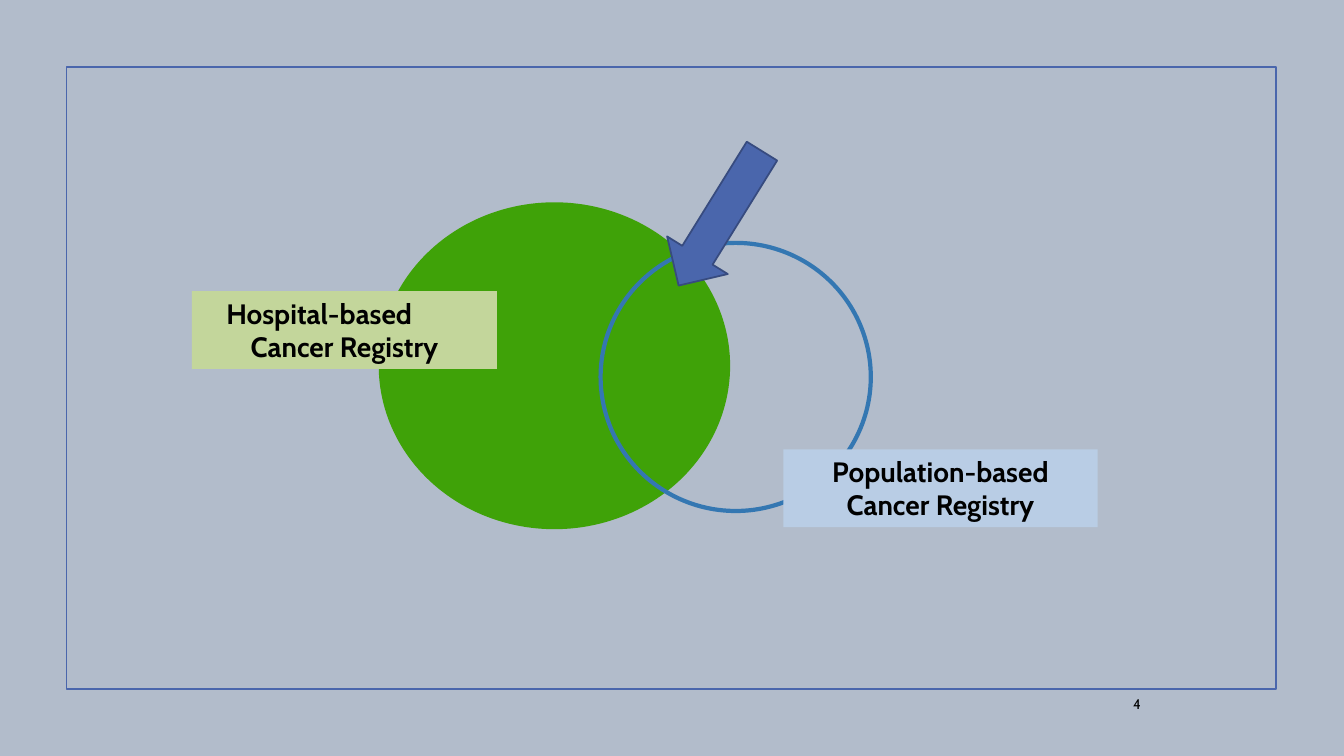
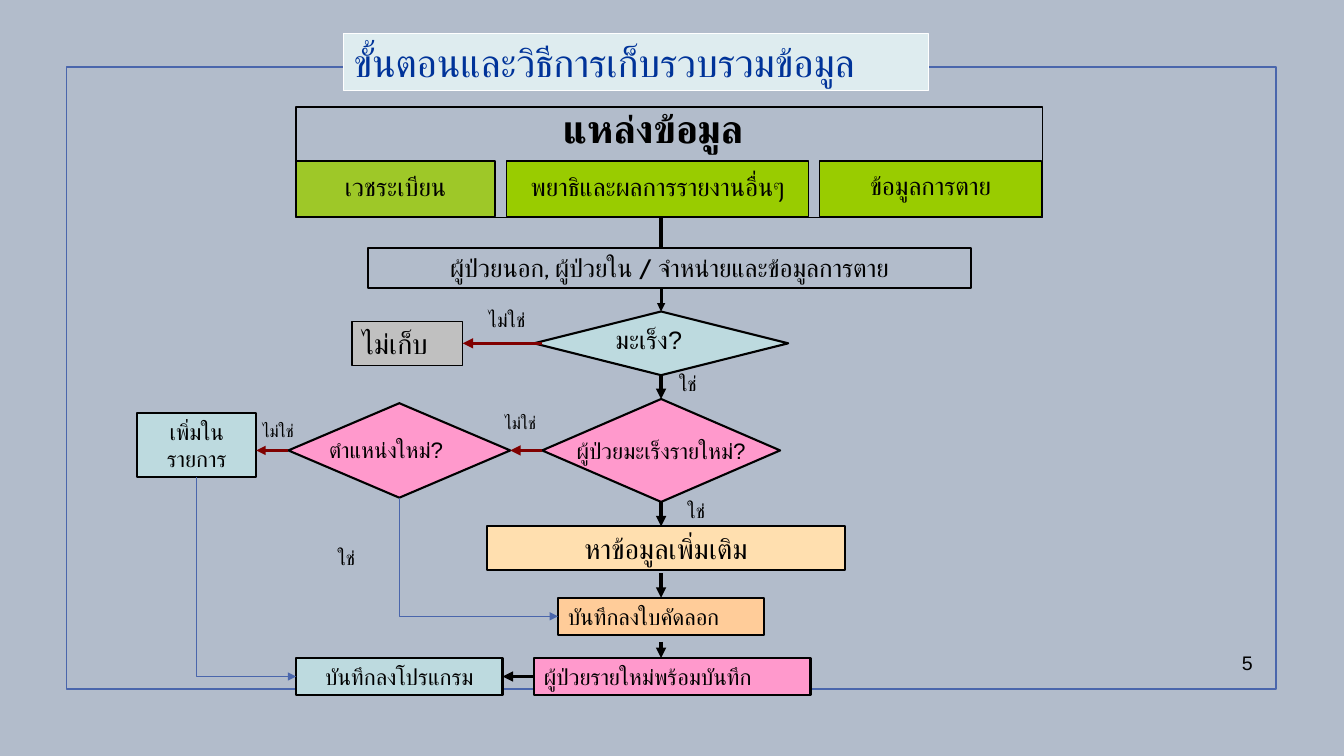
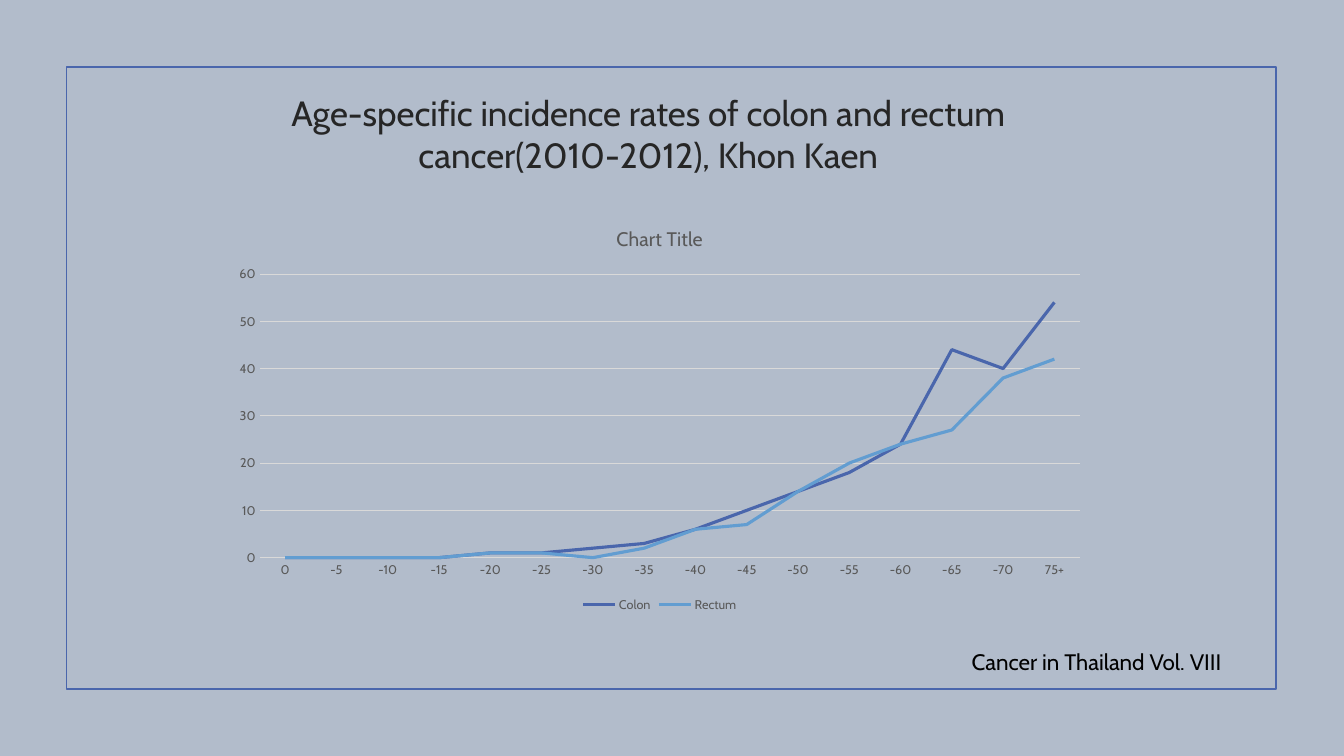
"""Build three cancer registry slides: overlap, data collection flow and incidence rates."""
from dataclasses import dataclass
from typing import Optional

from lxml.etree import SubElement
from pptx import Presentation
from pptx.chart.data import CategoryChartData
from pptx.dml.color import RGBColor
from pptx.enum.chart import XL_CHART_TYPE as ChartType, XL_LEGEND_POSITION as LegendPosition
from pptx.enum.chart import XL_TICK_MARK as TickMark
from pptx.enum.shapes import MSO_CONNECTOR as Link, MSO_SHAPE as Kind
from pptx.enum.text import MSO_ANCHOR as Anchor, PP_ALIGN as Align
from pptx.oxml.ns import qn
from pptx.util import Pt

BACKDROP = RGBColor(0xB2, 0xBC, 0xCB)
BLACK = RGBColor(0x00, 0x00, 0x00)
WHITE = RGBColor(0xFF, 0xFF, 0xFF)
INDIGO = RGBColor(0x4A, 0x66, 0xAC)
DARK_INDIGO = RGBColor(0x37, 0x4B, 0x7F)
SKY = RGBColor(0x62, 0x9D, 0xD1)
BLUE = RGBColor(0x34, 0x77, 0xB2)
NAVY = RGBColor(0x00, 0x33, 0x99)
PALE_BLUE = RGBColor(0xB9, 0xCD, 0xE5)
GREEN = RGBColor(0x3F, 0xA2, 0x08)
PALE_GREEN = RGBColor(0xC3, 0xD6, 0x9B)
LIME = RGBColor(0x99, 0xCC, 0x00)
ICE = RGBColor(0xDE, 0xEC, 0xEF)
TEAL = RGBColor(0xBD, 0xDA, 0xDF)
PINK = RGBColor(0xFF, 0x99, 0xCC)
CREAM = RGBColor(0xFF, 0xDF, 0xAF)
ORANGE = RGBColor(0xFF, 0xCC, 0x99)
SILVER = RGBColor(0xC0, 0xC0, 0xC0)
MAROON = RGBColor(0x80, 0x00, 0x00)
CHARCOAL = RGBColor(0x26, 0x26, 0x26)
GRAY = RGBColor(0x59, 0x59, 0x59)
GRID = RGBColor(0xD9, 0xD9, 0xD9)
SANS = "Cabin"
PLAIN = "Arial"
TOP, LEFT, BOTTOM, RIGHT = range(4)
SPINE = 472.25


@dataclass(frozen=True)
class Node:
    left: float
    top: float
    width: float
    height: float
    fill: Optional[RGBColor] = None
    line: Optional[RGBColor] = BLACK
    weight: float = 1.5
    kind: Kind = Kind.RECTANGLE
    angle: float = 0


@dataclass(frozen=True)
class Caption:
    text: str
    left: float
    top: float
    width: float
    height: float
    size: float = 14


@dataclass(frozen=True)
class Arrow:
    start: tuple
    end: tuple
    color: RGBColor = BLACK
    weight: float = 2.5
    head: bool = True


def write(box, text: str, *, size: float, font: str = PLAIN, color: RGBColor = BLACK,
          bold: bool = False, align: Align = Align.LEFT, anchor: Anchor = Anchor.TOP,
          spacing: Optional[float] = None, wrap: bool = True) -> None:
    frame = box.text_frame
    frame.word_wrap = wrap
    frame.vertical_anchor = anchor
    for index, words in enumerate(text.split("\n")):
        para = frame.add_paragraph() if index else frame.paragraphs[0]
        para.alignment = align
        para.line_spacing = spacing
        span = para.add_run()
        span.text = words
        span.font.name, span.font.size = font, Pt(size)
        span.font.bold, span.font.color.rgb = bold, color


def draw(page, node: Node):
    shape = page.shapes.add_shape(node.kind, Pt(node.left), Pt(node.top),
                                  Pt(node.width), Pt(node.height))
    shape.shadow.inherit = False
    shape.rotation = node.angle
    if node.fill is None:
        shape.fill.background()
    else:
        shape.fill.solid()
        shape.fill.fore_color.rgb = node.fill
    if node.line is None:
        shape.line.fill.background()
    else:
        shape.line.color.rgb = node.line
        shape.line.width = Pt(node.weight)
    return shape


def caption(page, item: Caption, **style) -> None:
    box = page.shapes.add_textbox(Pt(item.left), Pt(item.top), Pt(item.width), Pt(item.height))
    write(box, item.text, size=item.size, **style)


def finish(connector, arrow: Arrow) -> None:
    connector.line.color.rgb = arrow.color
    connector.line.width = Pt(arrow.weight)
    properties = connector._element.spPr
    if arrow.head:
        SubElement(properties.find(qn("a:ln")), qn("a:tailEnd"), type="triangle")
    SubElement(properties, qn("a:effectLst"))


def join(connector, arrow: Arrow, nodes: dict) -> None:
    for end, attach in ((arrow.start, connector.begin_connect), (arrow.end, connector.end_connect)):
        if isinstance(end[0], str):
            attach(nodes[end[0]], end[1])


def straight(page, arrow: Arrow, nodes: dict) -> None:
    points = [0 if isinstance(end[0], str) else Pt(value)
              for end in (arrow.start, arrow.end) for value in end]
    connector = page.shapes.add_connector(Link.STRAIGHT, *points)
    join(connector, arrow, nodes)
    finish(connector, arrow)


def down_then_right(page, arrow: Arrow, nodes: dict) -> None:
    connector = page.shapes.add_connector(Link.ELBOW, 0, 0, 0, 0)
    join(connector, arrow, nodes)
    across, down = connector.width, connector.height
    shift = (across - down) // 2
    connector.left, connector.top = connector.left + shift, connector.top - shift
    connector.width, connector.height = down, across
    properties = connector._element.spPr
    properties.find(qn("a:prstGeom")).set("prst", "bentConnector2")
    transform = properties.find(qn("a:xfrm"))
    transform.set("rot", "16200000")
    transform.set("flipH", "1")
    finish(connector, arrow)


def new_page(deck):
    page = deck.slides.add_slide(deck.slide_layouts[6])
    draw(page, Node(47.5, 48, 864, 444, line=INDIGO, weight=1.25))
    return page


def build_overlap(deck) -> None:
    page = new_page(deck)
    draw(page, Node(272, 146, 248, 230.5, GREEN, GREEN, 3, Kind.OVAL))
    caption(page, Caption("4", 786, 485, 36, 36, 10), font=SANS,
            align=Align.RIGHT, anchor=Anchor.MIDDLE)
    draw(page, Node(429, 173.5, 193, 191.5, line=BLUE, weight=3, kind=Kind.OVAL))
    hospital = draw(page, Node(137, 208, 218, 55.5, PALE_GREEN, None))
    population = draw(page, Node(559.5, 321, 224.5, 55.5, PALE_BLUE, None))
    for label, text in ((hospital, "Hospital-based\nCancer Registry"),
                        (population, "Population-based Cancer Registry")):
        write(label, text, size=20, font=SANS, bold=True, align=Align.CENTER)
    for para, indent in zip(hospital.text_frame.paragraphs, (36, 0)):
        para._p.get_or_add_pPr().set("marR", str(Pt(indent)))
    draw(page, Node(489, 99.5, 51, 113, INDIGO, DARK_INDIGO, 1.25, Kind.DOWN_ARROW, 31.8))


def build_sources(page) -> None:
    draw(page, Node(211.5, 76.5, 533, 79, weight=1))
    sources = (
        ("ข้อมูลการตาย", 585.5, 158.5, 0.7),
        ("พยาธิและผลการรายงานอื่นๆ", 362, 215.5, 0.88),
        ("เวชระเบียน", 211.5, 142, 0.88),
    )
    for text, left, width, spacing in sources:
        source = draw(page, Node(left, 115, width, 39.5, LIME, weight=1))
        write(source, text, size=18, align=Align.CENTER, anchor=Anchor.MIDDLE, spacing=spacing)
    tint = source._element.spPr.find(qn("a:solidFill"))[0]
    SubElement(tint, qn("a:alpha"), val="80000")
    caption(page, Caption("แหล่งข้อมูล", 273.5, 71, 386, 41, 28), font=SANS,
            bold=True, align=Align.CENTER)


def build_flow(deck) -> None:
    page = new_page(deck)
    build_sources(page)
    title = draw(page, Node(245.5, 24, 417.5, 41, ICE, WHITE, 0.75))
    write(title, "ขั้นตอนและวิธีการเก็บรวบรวมข้อมูล", size=28, font=SANS, color=NAVY)

    decision = Kind.FLOWCHART_DECISION
    steps = {
        "patients": Node(263, 177, 430.5, 29),
        "cancer": Node(381.5, 222.5, 181.5, 45.5, TEAL, kind=decision),
        "reject": Node(251.5, 229.5, 79, 31.5, SILVER, weight=1),
        "site": Node(206, 288, 158.5, 67.5, PINK, kind=decision),
        "search": Node(348, 376, 255.5, 31.5, CREAM),
        "ready": Node(381.5, 470, 197.5, 26.5, PINK),
        "program": Node(211.5, 470, 147.5, 26.5, TEAL),
        "copy": Node(398.5, 427, 147.5, 26.5, ORANGE),
        "new case": Node(387.25, 285, 170, 73.5, PINK, kind=decision),
        "add": Node(98, 295, 85, 46, TEAL),
    }
    nodes = {name: draw(page, node) for name, node in steps.items()}
    texts = (
        ("patients", "ผู้ป่วยนอก, ผู้ป่วยใน / จำหน่ายและข้อมูลการตาย", 18, SANS, Align.CENTER),
        ("reject", "ไม่เก็บ", 20, PLAIN, Align.LEFT),
        ("search", "หาข้อมูลเพิ่มเติม", 20, PLAIN, Align.CENTER),
        ("ready", "ผู้ป่วยรายใหม่พร้อมบันทึก", 16, PLAIN, Align.LEFT),
        ("program", "บันทึกลงโปรแกรม", 16, PLAIN, Align.CENTER),
        ("copy", "บันทึกลงใบคัดลอก", 16, PLAIN, Align.LEFT),
        ("add", "เพิ่มในรายการ", 16, PLAIN, Align.CENTER),
    )
    for name, text, size, font, align in texts:
        write(nodes[name], text, size=size, font=font, align=align)
    write(nodes["new case"], "ผู้ป่วยมะเร็งรายใหม่?", size=16, align=Align.CENTER,
          anchor=Anchor.MIDDLE, wrap=False)

    captions = (
        Caption("มะเร็ง?", 432.5, 228, 90.5, 29, 18),
        Caption("ตำแหน่งใหม่?", 228, 308, 107.5, 26.5, 16),
        Caption("ไม่ใช่", 353.5, 291, 41, 21.5, 12),
        Caption("ไม่ใช่", 180.5, 297, 44, 21.5, 12),
        Caption("ไม่ใช่", 342, 216.5, 48.5, 24.5),
        Caption("ใช่", 484, 353, 45.5, 24.5),
        Caption("ใช่", 478, 262, 45.5, 24.5),
        Caption("ใช่", 234, 386.5, 45.5, 24.5),
    )
    for item in captions:
        caption(page, item)
    caption(page, Caption("5", 859.5, 462, 42.5, 22.5), align=Align.RIGHT, anchor=Anchor.MIDDLE)

    arrows = (
        Arrow((SPINE, 155), (SPINE, 177), head=False),
        Arrow((SPINE, 206.5), ("cancer", TOP), weight=2),
        Arrow(("cancer", BOTTOM), ("new case", TOP)),
        Arrow(("new case", BOTTOM), (SPINE, 376)),
        Arrow((SPINE, 409.5), ("copy", TOP)),
        Arrow((SPINE, 458.5), (SPINE, 470)),
        Arrow((387.5, 245.25), ("reject", RIGHT), MAROON),
        Arrow(("new case", LEFT), ("site", RIGHT), MAROON),
        Arrow(("site", LEFT), (183, 321.75), MAROON, 2.25),
        Arrow(("ready", LEFT), ("program", RIGHT)),
    )
    for arrow in arrows:
        straight(page, arrow, nodes)
    for start, end in (("add", "program"), ("site", "copy")):
        down_then_right(page, Arrow((start, BOTTOM), (end, LEFT), INDIGO, 0.75), nodes)


def style_font(font, size: float, color: RGBColor) -> None:
    font.name, font.size, font.color.rgb = SANS, Pt(size), color


def build_rates(deck) -> None:
    page = new_page(deck)
    caption(page, Caption("Age-specific incidence rates of colon and rectum "
                          "cancer(2010-2012), Khon Kaen", 168, 54, 590, 83, 25),
            font=SANS, color=CHARCOAL, align=Align.CENTER, anchor=Anchor.MIDDLE)
    caption(page, Caption("Cancer in Thailand Vol. VIII", 687, 459.5, 273, 26.5, 16), font=SANS)

    data = CategoryChartData()
    data.categories = ["0", *(f"-{age}" for age in range(5, 75, 5)), "75+"]
    data.add_series("Colon", (0, 0, 0, 0, 1, 1, 2, 3, 6, 10, 14, 18, 24, 44, 40, 54))
    data.add_series("Rectum", (0, 0, 0, 0, 1, 1, 0, 2, 6, 7, 14, 20, 24, 27, 38, 42))
    chart = page.shapes.add_chart(ChartType.LINE, Pt(158.5), Pt(149), Pt(625.5), Pt(291.5),
                                  data).chart
    style_font(chart.font, 10, BLACK)
    chart.has_title = True
    heading = chart.chart_title.text_frame
    heading.text = "Chart Title"
    style_font(heading.paragraphs[0].runs[0].font, 14, GRAY)
    heading.paragraphs[0].runs[0].font.bold = False
    chart.has_legend = True
    chart.legend.position = LegendPosition.BOTTOM
    chart.legend.include_in_layout = False
    style_font(chart.legend.font, 9, GRAY)

    ages, rates = chart.category_axis, chart.value_axis
    for axis in (ages, rates):
        axis.major_tick_mark = axis.minor_tick_mark = TickMark.NONE
        style_font(axis.tick_labels.font, 9, GRAY)
    rates.minimum_scale, rates.maximum_scale, rates.major_unit = 0, 60, 10
    rates.has_major_gridlines = True
    rates.format.line.fill.background()
    for line in (ages.format.line, rates.major_gridlines.format.line):
        line.color.rgb, line.width = GRID, Pt(0.75)
    plot = chart.plots[0]
    plot.vary_by_categories = False
    for series, color in zip(plot.series, (INDIGO, SKY)):
        series.smooth = False
        series.format.line.color.rgb, series.format.line.width = color, Pt(2.25)


def main() -> None:
    deck = Presentation()
    deck.slide_width, deck.slide_height = Pt(960), Pt(540)
    backdrop = deck.slide_master.background.fill
    backdrop.solid()
    backdrop.fore_color.rgb = BACKDROP
    for build in (build_overlap, build_flow, build_rates):
        build(deck)
    deck.save("out.pptx")


if __name__ == "__main__":
    main()
